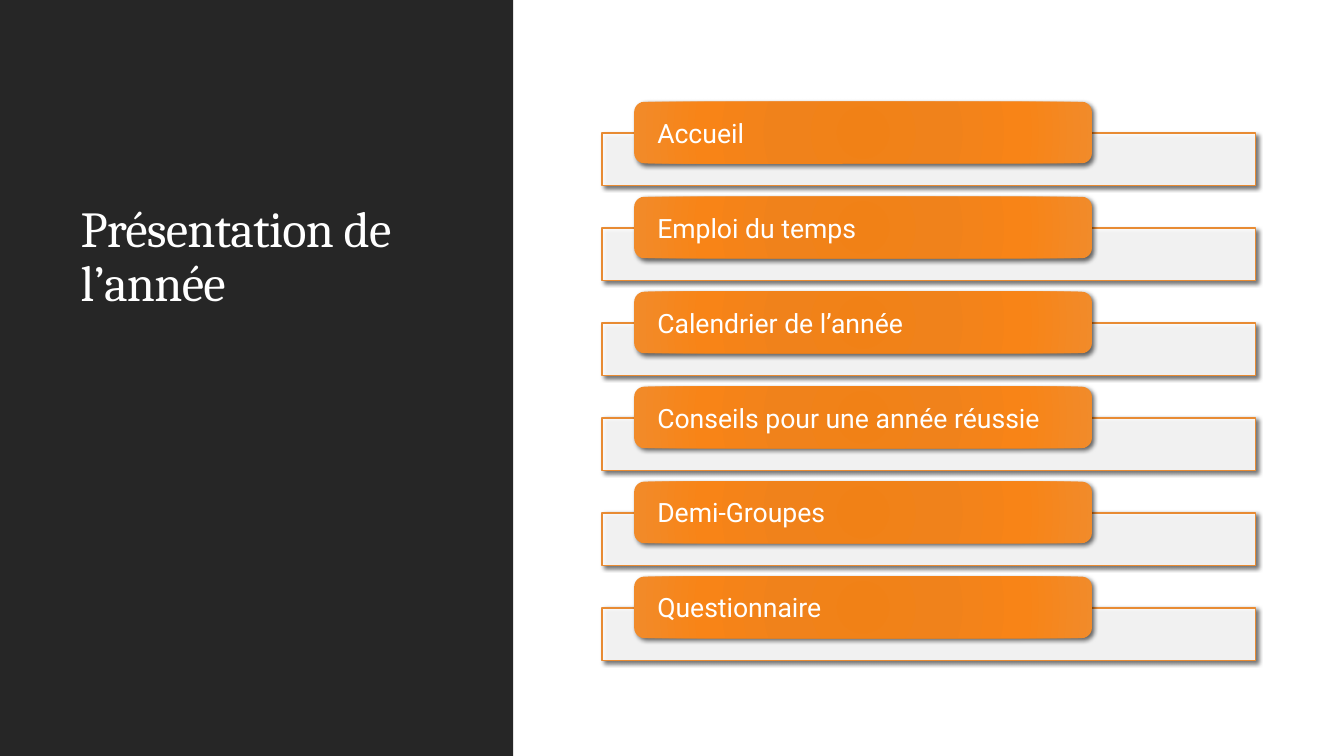
"""Build the agenda slide presenting the school year."""
import dataclasses
import typing

import lxml.etree
import pptx
import pptx.dml.color
import pptx.enum.shapes
import pptx.enum.text
import pptx.oxml
import pptx.oxml.ns
import pptx.util

Inches = pptx.util.Inches
Pt = pptx.util.Pt
qn = pptx.oxml.ns.qn
MSO_SHAPE = pptx.enum.shapes.MSO_SHAPE
MSO_ANCHOR = pptx.enum.text.MSO_ANCHOR
PP_ALIGN = pptx.enum.text.PP_ALIGN


@dataclasses.dataclass(frozen=True)
class Theme:
    dark: str = "262626"
    white: str = "FFFFFF"
    outline: str = "E88B33"
    shadow: str = "000000"
    gradient: tuple = ((0, "F18116"), (34, "F0821B"), (70, "F88417"), (100, "F18B2A"))
    title_font: str = "Cambria"
    body_font: str = "Roboto"
    title_size: int = 36
    body_size: int = 19


@dataclasses.dataclass(frozen=True)
class Box:
    left: float
    top: float
    width: float
    height: float

    def shifted(self, dy: float) -> "Box":
        return dataclasses.replace(self, top=self.top + dy)

    def lengths(self) -> tuple:
        return tuple(Inches(v) for v in dataclasses.astuple(self))


THEME = Theme()
SIDE_PANEL = Box(0, 0, 5.09, 7.5)
TITLE = Box(0.7, 0.86, 3.85, 2.29)
BAR = Box(5.97, 1.32, 6.48, 0.52)
TAB = Box(6.29, 1.01, 4.54, 0.61)
PITCH = 4.71 / 5
TOPICS = (
    "Accueil",
    "Emploi du temps",
    "Calendrier de l’année",
    "Conseils pour une année réussie",
    "Demi-Groupes",
    "Questionnaire",
)


def rgb(color: str) -> pptx.dml.color.RGBColor:
    return pptx.dml.color.RGBColor.from_string(color)


def apply(target: typing.Any, values: dict) -> None:
    for name, value in values.items():
        setattr(target, name, value)


def add_box(slide, kind, box: Box, color: typing.Optional[str] = None):
    sp = slide.shapes.add_shape(kind, *box.lengths())
    sp.shadow.inherit = False
    sp.line.fill.background()
    if color:
        sp.fill.solid()
        sp.fill.fore_color.rgb = rgb(color)
    return sp


def add_shadow(sp, blur: float) -> None:
    effects = sp.element.spPr.find(qn("a:effectLst"))
    effects.append(pptx.oxml.parse_xml(
        f'<a:outerShdw {pptx.oxml.ns.nsdecls("a")} blurRad="{Pt(blur)}" dist="{Pt(2)}" '
        f'dir="2700000" algn="ctr" rotWithShape="0"><a:srgbClr val="{THEME.shadow}">'
        '<a:alpha val="60000"/></a:srgbClr></a:outerShdw>'))


def add_radial_fill(sp) -> None:
    stops = "".join(f'<a:gs pos="{pos * 1000}"><a:srgbClr val="{color}"/></a:gs>'
                    for pos, color in THEME.gradient)
    sp.element.spPr.find(qn("a:prstGeom")).addnext(pptx.oxml.parse_xml(
        f'<a:gradFill {pptx.oxml.ns.nsdecls("a")} rotWithShape="1"><a:gsLst>{stops}</a:gsLst>'
        '<a:path path="circle"><a:fillToRect l="100000" t="100000" r="100000" b="100000"/>'
        '</a:path></a:gradFill>'))


def write(sp, text: str, font: str, size: int, frame: dict):
    tf = sp.text_frame
    apply(tf, {"word_wrap": True, "auto_size": pptx.enum.text.MSO_AUTO_SIZE.NONE, **frame})
    p = tf.paragraphs[0]
    p.alignment = PP_ALIGN.LEFT
    r = p.add_run()
    r.text = text
    apply(r.font, {"name": font, "size": Pt(size)})
    r.font.color.rgb = rgb(THEME.white)
    return p


def add_title(slide) -> None:
    sp = slide.shapes.title
    apply(sp, dict(zip(("left", "top", "width", "height"), TITLE.lengths())))
    p = write(sp, "Présentation de l’année", THEME.title_font, THEME.title_size,
              {"vertical_anchor": MSO_ANCHOR.BOTTOM})
    p.line_spacing = 0.9
    p.runs[0].font._element.set("spc", "-50")


def add_topic(slide, text: str, dy: float) -> None:
    bar = add_box(slide, MSO_SHAPE.RECTANGLE, BAR.shifted(dy), THEME.white)
    color = bar.element.spPr.find(qn("a:solidFill")).find(qn("a:srgbClr"))
    lxml.etree.SubElement(color, qn("a:alpha")).set("val", "90000")
    bar.line.color.rgb = rgb(THEME.outline)
    bar.line.width = Pt(1)
    add_shadow(bar, 3)

    tab = add_box(slide, MSO_SHAPE.ROUNDED_RECTANGLE, TAB.shifted(dy))
    add_radial_fill(tab)
    add_shadow(tab, 3.5)
    write(tab, text, THEME.body_font, THEME.body_size,
          {"vertical_anchor": MSO_ANCHOR.MIDDLE, "margin_left": Inches(0.2),
           "margin_right": Inches(0.2), "margin_top": 0, "margin_bottom": 0})


def main() -> None:
    prs = pptx.Presentation()
    apply(prs, {"slide_width": Inches(13.33), "slide_height": Inches(7.5)})
    slide = prs.slides.add_slide(prs.slide_layouts[5])
    panel = add_box(slide, MSO_SHAPE.RECTANGLE, SIDE_PANEL, THEME.dark)
    slide.shapes.title.element.addprevious(panel.element)
    add_title(slide)
    for i, topic in enumerate(TOPICS):
        add_topic(slide, topic, i * PITCH)
    prs.save("out.pptx")


if __name__ == "__main__":
    main()
